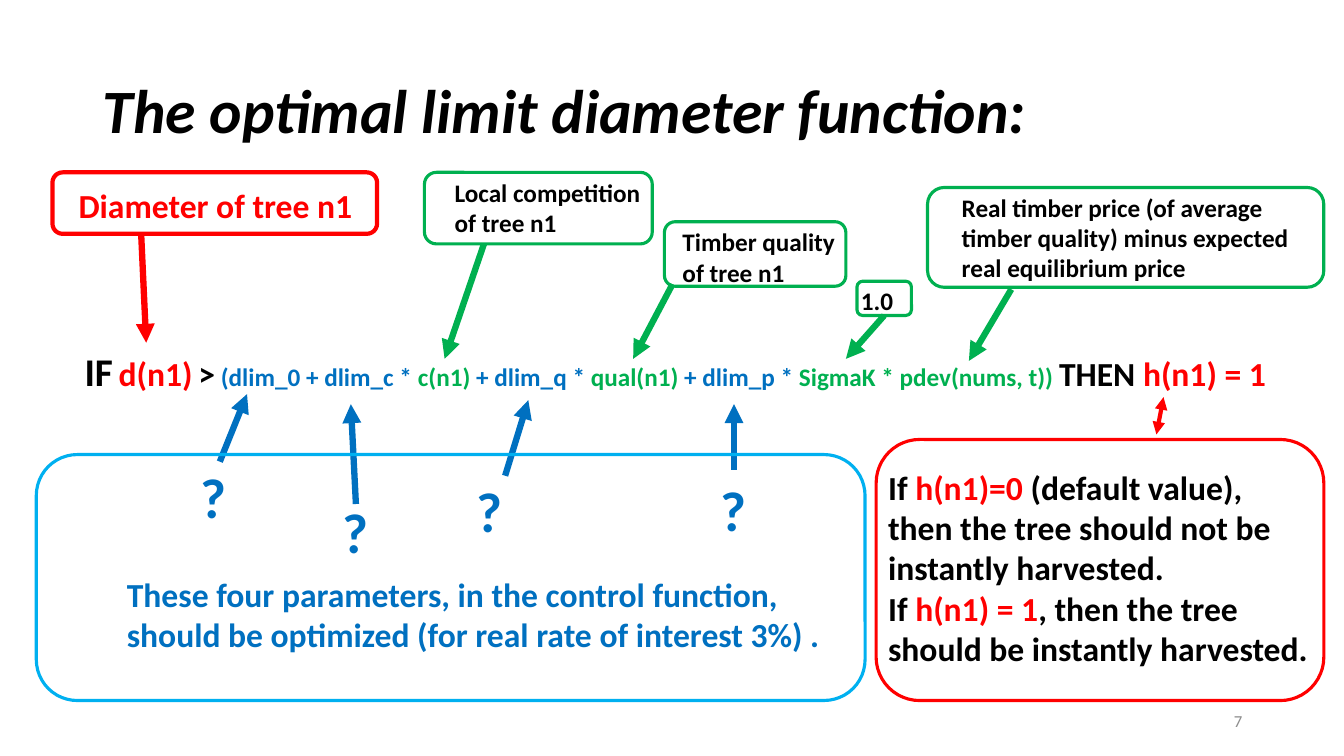
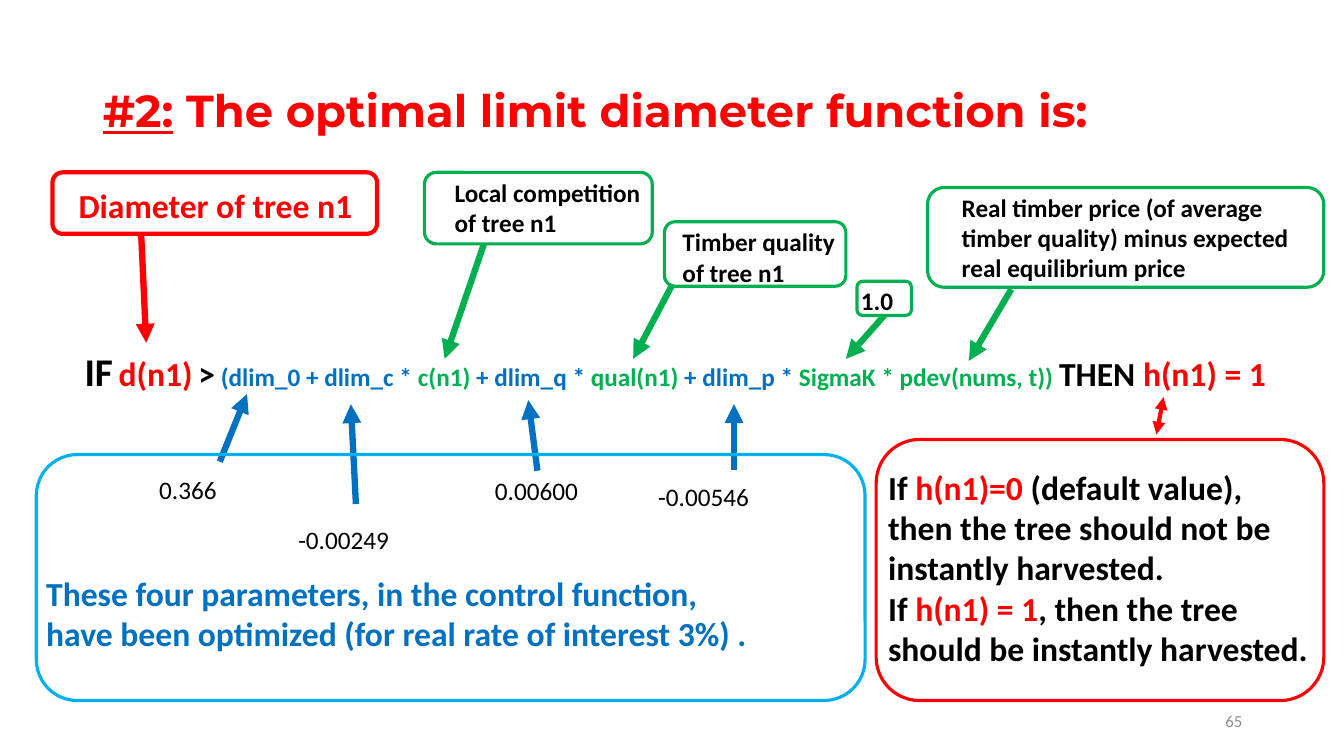
"""Build two slides that explain the optimal limit diameter function."""
from lxml import etree
from pptx import Presentation
from pptx.dml.color import RGBColor
from pptx.enum.shapes import MSO_CONNECTOR, MSO_SHAPE
from pptx.enum.text import MSO_ANCHOR, MSO_AUTO_SIZE, PP_ALIGN
from pptx.oxml.ns import qn
from pptx.util import Pt

EMU_PER_PX = 9144
SLIDE_WIDTH, SLIDE_HEIGHT = 1333, 750
ROUND_INSET = 0.05

BLACK = RGBColor(0x00, 0x00, 0x00)
GRAY = RGBColor(0x8C, 0x8C, 0x8C)
RED = RGBColor(0xFF, 0x00, 0x00)
GREEN = RGBColor(0x00, 0xB0, 0x50)
BLUE = RGBColor(0x00, 0x70, 0xC0)
SKY = RGBColor(0x00, 0xB0, 0xF0)

BASE = {"name": "Calibri", "size": Pt(18), "bold": True, "color": BLACK}
LARGE = {**BASE, "size": Pt(24)}
LARGE_BLUE = {**LARGE, "color": BLUE}
NUMBER = {**BASE, "size": Pt(12), "bold": False, "color": GRAY}
QUESTION = {**BASE, "size": Pt(40), "color": BLUE}
VALUE = {**BASE, "bold": False}

RED_TEXT = {"color": RED}
GREEN_TEXT = {"color": GREEN}
BLUE_TEXT = {"color": BLUE}

FORMULA = [
    ("IF", {"size": Pt(28)}),
    (" ", {"bold": False}),
    ("d(n1)", {"size": Pt(24), "color": RED}),
    (" ", {}),
    (">", {"size": Pt(24)}),
    (" (dlim_0 + dlim_c * ", BLUE_TEXT),
    ("c(n1)", GREEN_TEXT),
    (" + dlim_q * ", BLUE_TEXT),
    ("qual(n1)", GREEN_TEXT),
    (" + dlim_p * ", BLUE_TEXT),
    ("SigmaK * pdev(nums, t)) ", GREEN_TEXT),
    ("THEN", {"size": Pt(24)}),
    (" h(n1) = 1", {"size": Pt(24), "color": RED}),
]
RESULT = [
    [("If ", {}), ("h(n1)=0 ", RED_TEXT), ("(default value),", {})],
    "then the tree should not be",
    "instantly harvested.",
    [("If ", {}), ("h(n1) = 1", RED_TEXT), (", then the tree", {})],
    "should be instantly harvested.",
]

# Each label: box, text offset inside the box, lines, text format, outline, width
LABELS = [
    ((52, 171, 322, 61), (26, 13), ["Diameter of tree n1"],
     {**LARGE, "color": RED}, RED, 3),
    ((421, 171, 226, 71), (30, 5), ["Local competition", "of tree n1"],
     BASE, GREEN, 2.25),
    ((659, 220, 180, 64), (18, 5), ["Timber quality", "of tree n1"],
     BASE, GREEN, 2.25),
    ((850, 279, 54, 34), (4, 4), ["1.0"], BASE, GREEN, 2.25),
    ((920, 186, 393, 99), (34, 3),
     ["Real timber price (of average", "timber quality) minus expected",
      "real equilibrium price"], BASE, GREEN, 2.25),
]
LABEL_ARROWS = [
    ((140, 232), (145, 340), RED),
    ((480, 242), (441, 356), GREEN),
    ((667, 282), (628, 356), GREEN),
    ((877, 313), (839, 356), GREEN),
    ((1003, 287), (961, 358), GREEN),
]
PARAMETER_TARGETS = [(245, 391), (348, 401), (524, 397), (728, 401)]

SLIDES = [
    {
        "title": [("The optimal limit diameter function:", {})],
        "title_format": {**BASE, "size": Pt(44), "italic": True},
        "number": "7",
        "arrow_starts": [(218, 458), (353, 500), (501, 472), (728, 466)],
        "parameters": [("?", 189, 454), ("?", 330, 489),
                       ("?", 463, 468), ("?", 705, 467)],
        "parameter_size": (60, 77),
        "parameter_format": QUESTION,
        "note": "should be optimized (for real rate of interest 3%) .",
        "note_position": (116, 564),
    },
    {
        "title": [("#2:", {"underline": True}),
                  (" The optimal limit diameter function is:", {})],
        "title_format": {**BASE, "name": "Montserrat", "size": Pt(32),
                         "color": RED},
        "number": "65",
        "arrow_starts": [(218, 458), (353, 500), (533, 467), (728, 466)],
        "parameters": [("0.366", 148, 466), ("-0.00249", 286, 515),
                       ("0.00600", 481, 467), ("-0.00546", 643, 473)],
        "parameter_size": (125, 40),
        "parameter_format": VALUE,
        "note": "have been optimized (for real rate of interest 3%) .",
        "note_position": (36, 563),
    },
]


def px(*lengths):
    """Turn pixel lengths into a list of EMU lengths."""
    return [round(length * EMU_PER_PX) for length in lengths]


def format_run(run, values):
    """Apply a dict of font values to a run."""
    for name, value in values.items():
        if name == "color":
            run.font.color.rgb = value
        else:
            setattr(run.font, name, value)


def write_lines(frame, lines, text_format, align=PP_ALIGN.LEFT):
    """Write each line, a string or a list of runs, as one paragraph."""
    for index, line in enumerate(lines):
        paragraph = frame.add_paragraph() if index else frame.paragraphs[0]
        paragraph.alignment = align
        runs = [(line, {})] if isinstance(line, str) else line
        for text, changes in runs:
            run = paragraph.add_run()
            run.text = text
            format_run(run, {**text_format, **changes})


def add_text(slide, box, lines, text_format, **options):
    """Add a wrapping text box."""
    frame = slide.shapes.add_textbox(*px(*box)).text_frame
    frame.word_wrap = True
    write_lines(frame, lines, text_format, **options)
    return frame


def add_panel(slide, box, color, width):
    """Add an unfilled rounded rectangle with a coloured outline."""
    shape = slide.shapes.add_shape(MSO_SHAPE.ROUNDED_RECTANGLE, *px(*box))
    shape.shadow.inherit = False
    shape.fill.background()
    shape.line.color.rgb = color
    shape.line.width = Pt(width)
    return shape


def add_label(slide, box, offset, lines, text_format, color, width):
    """Add a rounded rectangle that holds its own text."""
    frame = add_panel(slide, box, color, width).text_frame
    corner = ROUND_INSET * min(box[2:])
    left, top = px(*(max(0, distance - corner) for distance in offset))
    values = {"word_wrap": True, "vertical_anchor": MSO_ANCHOR.TOP,
              "margin_left": left, "margin_top": top,
              "margin_right": 0, "margin_bottom": 0}
    for name, value in values.items():
        setattr(frame, name, value)
    write_lines(frame, lines, text_format)


def add_arrow(slide, start, end, color, width=4.5, ends=("tailEnd",)):
    """Add a straight connector with triangular arrowheads."""
    connector = slide.shapes.add_connector(
        MSO_CONNECTOR.STRAIGHT, *px(*start, *end))
    connector.line.color.rgb = color
    connector.line.width = Pt(width)
    properties = connector.element.spPr
    line = properties.find(qn("a:ln"))
    for end_name in ends:
        etree.SubElement(line, qn(f"a:{end_name}"), type="triangle")
    etree.SubElement(properties, qn("a:effectLst"))


def add_title(slide, runs, text_format):
    """Place and fill the title placeholder."""
    title = slide.shapes.title
    names = ("left", "top", "width", "height")
    for name, value in zip(names, px(92, 40, 1150, 145)):
        setattr(title, name, value)
    frame = title.text_frame
    frame.auto_size = MSO_AUTO_SIZE.NONE
    frame.vertical_anchor = MSO_ANCHOR.MIDDLE
    write_lines(frame, [runs], text_format)
    frame.paragraphs[0].line_spacing = 0.9


def add_parameters(slide, content):
    """Add the parameter arrows, their values and the note in a panel."""
    for start, target in zip(content["arrow_starts"], PARAMETER_TARGETS):
        add_arrow(slide, start, target, BLUE)
    add_panel(slide, (36, 451, 822, 244), SKY, 2.25)
    for text, left, top in content["parameters"]:
        add_text(slide, (left, top, *content["parameter_size"]), [text],
                 content["parameter_format"])
    add_text(slide, (*content["note_position"], 740, 91),
             ["These four parameters, in the control function,",
              content["note"]], LARGE_BLUE)


def add_result(slide):
    """Add the panel that explains the harvest decision."""
    add_text(slide, (871, 458, 450, 212), RESULT, LARGE)
    add_panel(slide, (869, 436, 444, 259), RED, 2.25)
    add_arrow(slide, (1154, 394), (1147, 431), RED, 3,
              ("headEnd", "tailEnd"))


def add_function_slide(presentation, content):
    """Add one slide with the annotated function."""
    slide = presentation.slides.add_slide(presentation.slide_layouts[5])
    add_title(slide, content["title"], content["title_format"])
    number = add_text(slide, (942, 695, 300, 40), [content["number"]],
                      NUMBER, align=PP_ALIGN.RIGHT)
    number.vertical_anchor = MSO_ANCHOR.MIDDLE
    add_text(slide, (74, 340, 1205, 57), [FORMULA], BASE)
    add_parameters(slide, content)
    add_result(slide)
    for start, end, color in LABEL_ARROWS:
        add_arrow(slide, start, end, color)
    for label in LABELS:
        add_label(slide, *label)


def main():
    """Build and save the presentation."""
    presentation = Presentation()
    presentation.slide_width, presentation.slide_height = px(
        SLIDE_WIDTH, SLIDE_HEIGHT)
    for content in SLIDES:
        add_function_slide(presentation, content)
    presentation.save("out.pptx")


if __name__ == "__main__":
    main()
